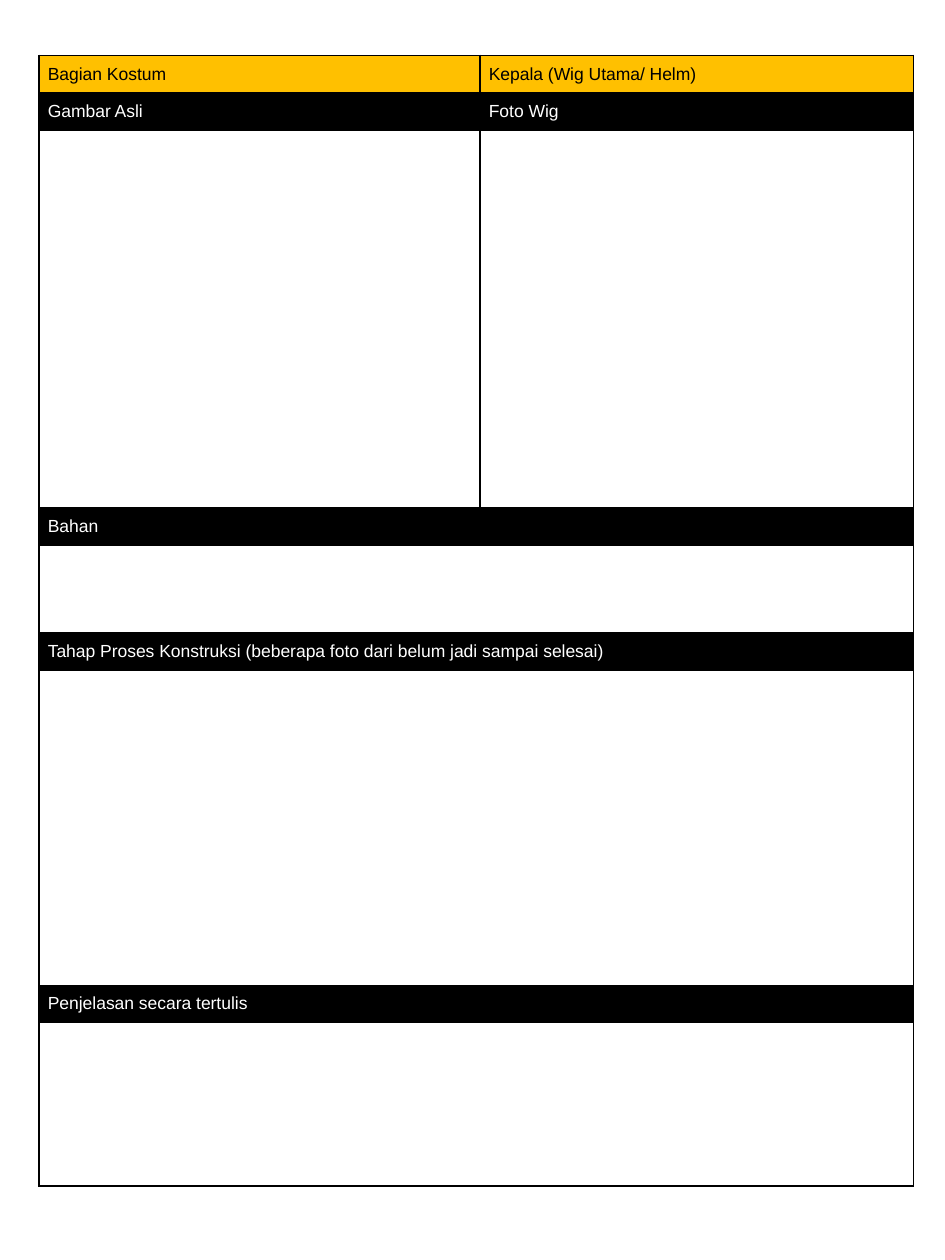
from lxml import etree
from pptx import Presentation
from pptx.dml.color import RGBColor
from pptx.oxml.ns import qn
from pptx.util import Inches, Pt

BLACK = RGBColor(0x00, 0x00, 0x00)
WHITE = RGBColor(0xFF, 0xFF, 0xFF)
AMBER = RGBColor(0xFF, 0xC0, 0x00)
BORDER_SIDES = ("a:lnL", "a:lnR", "a:lnT", "a:lnB")
CELL_MARGINS = ("margin_left", "margin_right", "margin_top", "margin_bottom")
COLUMN_WIDTHS = (3.5, 3.44)
LABEL_HEIGHT = 0.29

FORM_ROWS = (
    (LABEL_HEIGHT, ("Bagian Kostum", "Kepala (Wig Utama/ Helm)"), AMBER, BLACK),
    (LABEL_HEIGHT, ("Gambar Asli", "Foto Wig"), BLACK, WHITE),
    (3, ("", ""), None, BLACK),
    (LABEL_HEIGHT, ("Bahan",), BLACK, WHITE),
    (0.7, ("",), None, BLACK),
    (LABEL_HEIGHT, ("Tahap Proses Konstruksi (beberapa foto dari belum jadi sampai selesai)",),
     BLACK, WHITE),
    (2.5, ("",), None, BLACK),
    (LABEL_HEIGHT, ("Penjelasan secara tertulis",), BLACK, WHITE),
    (1.3, ("",), None, BLACK),
)


class CostumeSheet:
    """Draws the parts of a costume worksheet on one slide in a shared style."""

    font_format = {"name": "Arial", "size": Pt(10), "bold": False}
    margin = Inches(0.07)
    border_width = Pt(1)

    def __init__(self, slide):
        self.slide = slide

    def border(self, cell):
        properties = cell._tc.get_or_add_tcPr()
        for position, side in enumerate(BORDER_SIDES):
            line = etree.Element(qn(side), w=str(self.border_width))
            fill = etree.SubElement(line, qn("a:solidFill"))
            etree.SubElement(fill, qn("a:srgbClr"), val=str(BLACK))
            properties.insert(position, line)

    def cell(self, cell, label, fill, ink):
        for side in CELL_MARGINS:
            setattr(cell, side, self.margin)
        if fill is None:
            cell.fill.background()
        else:
            cell.fill.solid()
            cell.fill.fore_color.rgb = fill
        self.border(cell)
        paragraph = cell.text_frame.paragraphs[0]
        if label:
            paragraph.add_run().text = label
        for font in [paragraph.font] + [run.font for run in paragraph.runs]:
            for attribute, value in self.font_format.items():
                setattr(font, attribute, value)
            font.color.rgb = ink

    def form(self, left, top, widths, rows):
        height = sum(row[0] for row in rows)
        form = self.slide.shapes.add_table(
            len(rows), len(widths), Inches(left), Inches(top),
            Inches(sum(widths)), Inches(height)).table
        form.first_row = form.horz_banding = False
        for column, width in zip(form.columns, widths):
            column.width = Inches(width)
        for index, (row_height, labels, fill, ink) in enumerate(rows):
            form.rows[index].height = Inches(row_height)
            for column in range(len(widths)):
                label = labels[column] if column < len(labels) else ""
                self.cell(form.cell(index, column), label, fill, ink)
            if len(labels) == 1:
                form.cell(index, 0).merge(form.cell(index, len(widths) - 1))


def main():
    presentation = Presentation()
    presentation.slide_width = Inches(7.5)
    presentation.slide_height = Inches(10)
    sheet = CostumeSheet(presentation.slides.add_slide(presentation.slide_layouts[6]))
    sheet.form(0.31, 0.44, COLUMN_WIDTHS, FORM_ROWS)
    presentation.save("out.pptx")


if __name__ == "__main__":
    main()
